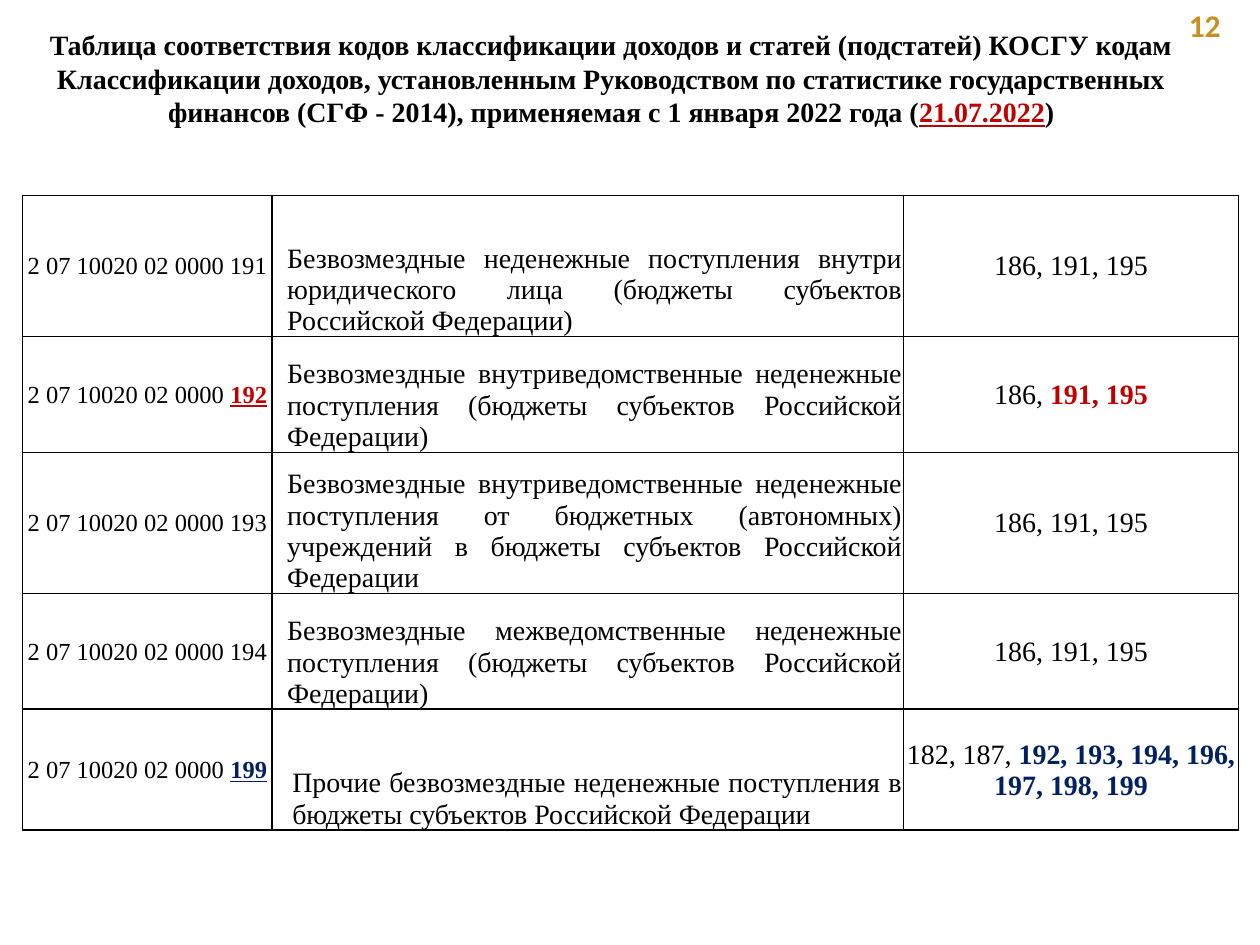
from dataclasses import dataclass

from lxml import etree
from pptx import Presentation
from pptx.dml.color import RGBColor
from pptx.enum.text import MSO_ANCHOR, MSO_AUTO_SIZE, PP_ALIGN
from pptx.oxml.ns import qn
from pptx.util import Inches, Pt

CENTER, JUSTIFY, LEFT = PP_ALIGN.CENTER, PP_ALIGN.JUSTIFY, PP_ALIGN.LEFT
TOP, MIDDLE, BOTTOM = MSO_ANCHOR.TOP, MSO_ANCHOR.MIDDLE, MSO_ANCHOR.BOTTOM
TITLE_ONLY = 5


@dataclass(frozen=True)
class Theme:
    font: str = "Times New Roman"
    number_font: str = "Calibri"
    ink: str = "000000"
    paper: str = "FFFFFF"
    red: str = "C00000"
    navy: str = "002060"
    gold: str = "C79023"
    title_size: int = 16
    code_size: int = 14
    body_size: int = 16
    number_size: int = 18
    border: int = 1


class SlideBuilder:
    def __init__(self, prs, theme):
        self.theme = theme
        self.s = prs.slides.add_slide(prs.slide_layouts[TITLE_ONLY])

    def run(self, p, text, size, color=None, bold=False, underline=False, font=None):
        r = p.add_run()
        r.text = text
        r.font.name = font or self.theme.font
        r.font.size = Pt(size)
        r.font.bold = bold
        r.font.underline = underline
        r.font.color.rgb = RGBColor.from_string(color or self.theme.ink)

    def title(self, box, parts):
        """Place the title; parts are (text, accent colour or None)."""
        sp = self.s.shapes.title
        sp.left, sp.top, sp.width, sp.height = map(Inches, box)
        tf = sp.text_frame
        tf.word_wrap = True
        tf.auto_size = MSO_AUTO_SIZE.NONE
        tf.vertical_anchor = TOP
        p = tf.paragraphs[0]
        p.alignment = CENTER
        for text, accent in parts:
            self.run(p, text, self.theme.title_size, accent, True, bool(accent))

    def page_number(self, box, text):
        t = self.theme
        tf = self.s.shapes.add_textbox(*map(Inches, box)).text_frame
        tf.word_wrap = True
        p = tf.paragraphs[0]
        p.alignment = LEFT
        self.run(p, text, t.number_size, t.gold, True, font=t.number_font)

    def cell(self, cell, parts, size, align, anchor, indent=0, underline=False):
        """Fill one cell; accented parts are bold."""
        cell.margin_left = cell.margin_right = cell.margin_top = Inches(0.01)
        cell.margin_bottom = 0
        cell.vertical_anchor = anchor
        self.borders(cell)
        cell.fill.solid()
        cell.fill.fore_color.rgb = RGBColor.from_string(self.theme.paper)
        p = cell.text_frame.paragraphs[0]
        p.alignment = align
        if indent:
            pPr = p._p.get_or_add_pPr()
            pPr.set("marL", str(Inches(indent)))
            pPr.set("indent", "0")
        for text, accent in parts:
            self.run(p, text, size, accent, bool(accent), underline and bool(accent))

    def borders(self, cell):
        tcPr = cell._tc.get_or_add_tcPr()
        for side in ("lnL", "lnR", "lnT", "lnB"):
            ln = etree.SubElement(tcPr, qn(f"a:{side}"), w=str(Pt(self.theme.border)))
            fill = etree.SubElement(ln, qn("a:solidFill"))
            etree.SubElement(fill, qn("a:srgbClr"), val=self.theme.ink)

    def table(self, left, top, widths, heights, rows):
        t = self.theme
        frame = self.s.shapes.add_table(
            len(heights), len(widths), Inches(left), Inches(top),
            Inches(sum(widths)), Inches(sum(heights)))
        tbl = frame.table
        tbl.first_row = tbl.horz_banding = False
        for column, width in zip(tbl.columns, widths):
            column.width = Inches(width)
        for row, height in zip(tbl.rows, heights):
            row.height = Inches(height)
        for i, (code, name, indent, items) in enumerate(rows):
            self.cell(tbl.cell(i, 0), code, t.code_size, CENTER, MIDDLE, underline=True)
            self.cell(tbl.cell(i, 1), [(name, None)], t.body_size, JUSTIFY, BOTTOM, indent)
            self.cell(tbl.cell(i, 2), items, t.body_size, CENTER, MIDDLE)


def main():
    theme = Theme()
    prs = Presentation()
    prs.slide_width, prs.slide_height = Inches(10), Inches(7.5)
    slide = SlideBuilder(prs, theme)

    # Heading and page number
    slide.title((0.18, 0.17, 9.34, 0.91), [
        ("Таблица соответствия кодов классификации доходов и статей (подстатей) "
         "КОСГУ кодам Классификации доходов, установленным Руководством по "
         "статистике государственных финансов (СГФ - 2014), применяемая "
         "с 1 января 2022 года (", None),
        ("21.07.2022", theme.red),
        (")", None),
    ])
    slide.page_number((9.28, 0, 0.72, 0.4), " 12")

    # Rows: income code, income name, name indent, matching articles
    prefix = "2 07 10020 02 0000 "
    usual = [("186, 191, 195", None)]
    rows = [
        ([(prefix + "191", None)],
         "Безвозмездные неденежные поступления внутри юридического лица "
         "(бюджеты субъектов Российской Федерации)", 0.11, usual),
        ([(prefix, None), ("192", theme.red)],
         "Безвозмездные внутриведомственные неденежные поступления "
         "(бюджеты субъектов Российской Федерации)", 0.11,
         [("186, ", None), ("191, 195", theme.red)]),
        ([(prefix + "193", None)],
         "Безвозмездные внутриведомственные неденежные поступления от бюджетных "
         "(автономных) учреждений в бюджеты субъектов Российской Федерации",
         0.11, usual),
        ([(prefix + "194", None)],
         "Безвозмездные межведомственные неденежные поступления "
         "(бюджеты субъектов Российской Федерации)", 0.11, usual),
        ([(prefix, None), ("199", theme.navy)],
         "Прочие безвозмездные неденежные поступления в бюджеты субъектов "
         "Российской Федерации", 0.15,
         [("182, 187, ", None), ("192, 193, 194, 196, 197, 198, 199", theme.navy)]),
    ]
    slide.table(0.18, 1.55, (1.98, 5.01, 2.66), (1.12, 0.92, 1.12, 0.92, 0.96), rows)

    prs.save("out.pptx")


if __name__ == "__main__":
    main()
